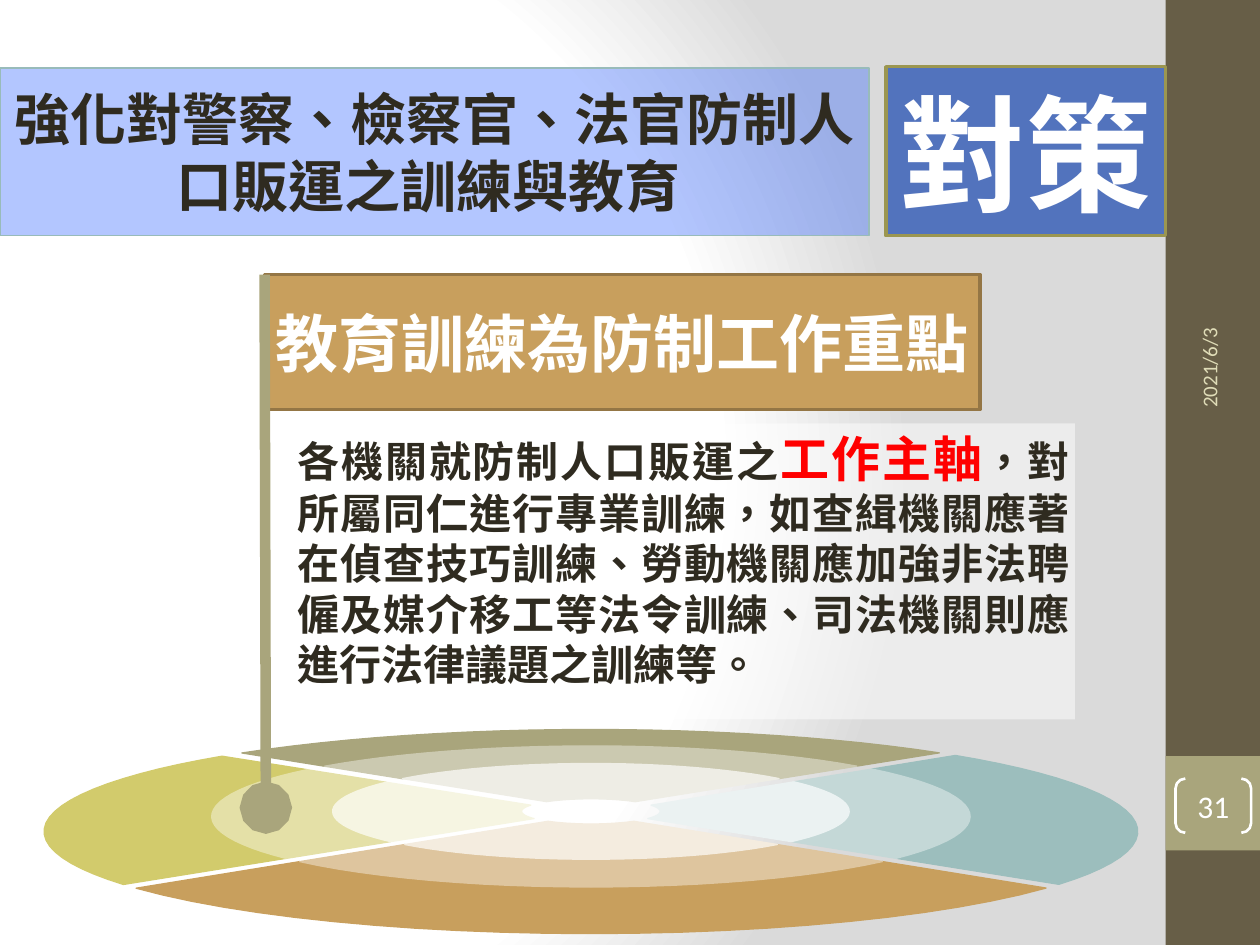
from dataclasses import dataclass
from math import atan2, cos, pi, sin, sqrt
from typing import Optional

from lxml.etree import SubElement
from pptx import Presentation
from pptx.dml.color import RGBColor
from pptx.enum.shapes import MSO_CONNECTOR, MSO_SHAPE
from pptx.enum.text import MSO_ANCHOR as Anchor, PP_ALIGN as Align
from pptx.oxml import parse_xml
from pptx.oxml.ns import nsdecls, qn
from pptx.util import Inches, Pt

WHITE = RGBColor(0xFF, 0xFF, 0xFF)
RED = RGBColor(0xFF, 0x00, 0x00)
INK = RGBColor(0x2F, 0x2B, 0x20)
BROWN = RGBColor(0x67, 0x5E, 0x47)
OLIVE = RGBColor(0xA9, 0xA5, 0x7C)
OLIVE_MID = RGBColor(0xCB, 0xC9, 0xB0)
OLIVE_LIGHT = RGBColor(0xEE, 0xED, 0xE5)
LIME = RGBColor(0xD2, 0xCB, 0x6C)
LIME_MID = RGBColor(0xE4, 0xE0, 0xA7)
LIME_LIGHT = RGBColor(0xF6, 0xF5, 0xE2)
TEAL = RGBColor(0x9C, 0xBE, 0xBD)
TEAL_MID = RGBColor(0xC4, 0xD8, 0xD7)
TEAL_LIGHT = RGBColor(0xEB, 0xF2, 0xF2)
TAN = RGBColor(0xC8, 0x9F, 0x5D)
TAN_MID = RGBColor(0xDE, 0xC5, 0x9E)
TAN_LIGHT = RGBColor(0xF4, 0xEC, 0xDF)
TAN_DARK = RGBColor(0x94, 0x76, 0x45)
BLUE = RGBColor(0x52, 0x73, 0xBD)
BRIGHT_BLUE = RGBColor(0x33, 0x66, 0xFF)
GOLD = RGBColor(0x9B, 0x96, 0x50)
SAGE = RGBColor(0x98, 0xBB, 0xBA)
CREAM = RGBColor(0xDF, 0xDC, 0xB7)

CJK = "Noto Sans CJK SC"
LATIN = "Calibri"
CENTER_X = 4.69
ARC_STEPS = 24
Point = tuple[float, float]


@dataclass(frozen=True)
class Ellipse:
    cy: float
    rx: float
    ry: float

    def at(self, angle: float) -> Point:
        return CENTER_X + self.rx * cos(angle), self.cy + self.ry * sin(angle)


@dataclass(frozen=True)
class Edge:
    """Straight side of a sector, from the hub to the rim."""
    inner: Point
    outer: Point

    def angle_on(self, ellipse: Ellipse) -> float:
        """Angle at which this edge crosses the ellipse."""
        x, y = (self.inner[0] - CENTER_X) / ellipse.rx, (self.inner[1] - ellipse.cy) / ellipse.ry
        dx = (self.outer[0] - self.inner[0]) / ellipse.rx
        dy = (self.outer[1] - self.inner[1]) / ellipse.ry
        a, b, c = dx * dx + dy * dy, x * dx + y * dy, x * x + y * y - 1
        t = (-b + sqrt(max(b * b - a * c, 0))) / a
        return atan2(y + t * dy, x + t * dx)


@dataclass(frozen=True)
class Sector:
    start: Edge
    end: Edge
    colors: tuple[RGBColor, RGBColor, RGBColor]


@dataclass(frozen=True)
class Panel:
    box: tuple[float, float, float, float]
    fill: Optional[RGBColor] = None
    line: Optional[RGBColor] = None
    line_width: float = 1
    alpha: int = 100
    kind: MSO_SHAPE = MSO_SHAPE.RECTANGLE


@dataclass(frozen=True)
class Span:
    text: str
    size: float
    color: RGBColor
    font: str = CJK


RINGS = [Ellipse(6.6, 4.34, 0.81), Ellipse(6.48, 3.01, 0.56),
         Ellipse(6.44, 2.05, 0.38), Ellipse(6.44, 0.55, 0.1)]
SECTORS = [
    Sector(Edge((4.32, 6.36), (1.88, 5.97)), Edge((5.06, 6.36), (7.49, 5.97)),
           (OLIVE, OLIVE_MID, OLIVE_LIGHT)),
    Sector(Edge((4.22, 6.5), (0.98, 7.02)), Edge((4.21, 6.39), (1.75, 6)),
           (LIME, LIME_MID, LIME_LIGHT)),
    Sector(Edge((5.17, 6.39), (7.62, 5.99)), Edge((5.16, 6.5), (8.41, 7.02)),
           (TEAL, TEAL_MID, TEAL_LIGHT)),
    Sector(Edge((5.04, 6.52), (8.31, 7.05)), Edge((4.34, 6.52), (1.08, 7.05)),
           (TAN, TAN_MID, TAN_LIGHT)),
]


def set_background(slide) -> None:
    stops = "".join(f'<a:gs pos="{position}"><a:srgbClr val="{color}"/></a:gs>'
                    for position, color in ((0, WHITE), (75000, WHITE), (100000, "DADADA")))
    slide.element.cSld.insert(0, parse_xml(
        f'<p:bg {nsdecls("p", "a")}><p:bgPr><a:gradFill rotWithShape="1"><a:gsLst>{stops}</a:gsLst>'
        '<a:path path="circle"><a:fillToRect l="20000" t="50000" r="100000" b="50000"/></a:path>'
        '</a:gradFill><a:effectLst/></p:bgPr></p:bg>'))


def add_panel(slide, panel: Panel):
    shape = slide.shapes.add_shape(panel.kind, *map(Inches, panel.box))
    shape.shadow.inherit = False
    if panel.fill is None:
        shape.fill.background()
    else:
        shape.fill.solid()
        shape.fill.fore_color.rgb = panel.fill
    if panel.alpha < 100:
        color = shape.fill._xPr.find(".//" + qn("a:srgbClr"))
        SubElement(color, qn("a:alpha"), val=str(panel.alpha * 1000))
    if panel.line is None:
        shape.line.fill.background()
    else:
        shape.line.color.rgb = panel.line
        shape.line.width = Pt(panel.line_width)
    return shape


def write(shape, spans: list[Span], inset: Optional[tuple[float, float, float, float]] = None,
          anchor: Anchor = Anchor.MIDDLE, align: Align = Align.CENTER) -> None:
    """Fill the shape with one paragraph; inset is left, top, right, bottom."""
    frame = shape.text_frame
    frame.word_wrap = True
    frame.vertical_anchor = anchor
    if inset:
        (frame.margin_left, frame.margin_top,
         frame.margin_right, frame.margin_bottom) = map(Inches, inset)
    paragraph = frame.paragraphs[0]
    paragraph.alignment = align
    for span in spans:
        run = paragraph.add_run()
        run.text = span.text
        run.font.size = Pt(span.size)
        run.font.color.rgb = span.color
        run.font.name = span.font
        if span.font == CJK:
            run.font.bold = True
            properties = run.font._element
            properties.set("lang", "zh-TW")
            SubElement(properties, qn("a:ea"), typeface=CJK)


def arc(ellipse: Ellipse, sector: Sector) -> list[Point]:
    start = sector.start.angle_on(ellipse)
    sweep = (sector.end.angle_on(ellipse) - start) % (2 * pi)
    return [ellipse.at(start + sweep * step / ARC_STEPS) for step in range(ARC_STEPS + 1)]


def add_ring_piece(slide, sector: Sector, outer: Ellipse, inner: Ellipse, color: RGBColor) -> None:
    points = [(Inches(x), Inches(y)) for x, y in arc(outer, sector) + arc(inner, sector)[::-1]]
    builder = slide.shapes.build_freeform(*points[0])
    builder.add_line_segments(points[1:], close=True)
    shape = builder.convert_to_shape()
    shape.shadow.inherit = False
    shape.fill.solid()
    shape.fill.fore_color.rgb = color
    shape.line.color.rgb = color
    shape.line.width = Pt(0)


def add_flagpole(slide) -> None:
    pole = slide.shapes.add_connector(MSO_CONNECTOR.STRAIGHT, Inches(2.11), Inches(6.41),
                                      Inches(2.1), Inches(2.18))
    pole.line.color.rgb = OLIVE
    pole.line.width = Pt(6)
    SubElement(pole.line._get_or_add_ln(), qn("a:headEnd"), type="oval", w="lg", len="lg")
    SubElement(pole._element.spPr, qn("a:effectLst"))


def main() -> None:
    presentation = Presentation()
    presentation.slide_width, presentation.slide_height = Inches(10), Inches(7.5)
    slide = presentation.slides.add_slide(presentation.slide_layouts[6])
    set_background(slide)
    add_panel(slide, Panel((9.25, 0, 0.75, 7.5), BROWN))
    add_panel(slide, Panel((9.25, 6, 0.75, 0.75), OLIVE))

    tag = add_panel(slide, Panel((7.03, 0.53, 2.22, 1.34), BLUE, GOLD, 2))
    write(tag, [Span("對策", 72, WHITE)], (0.08,) * 4, Anchor.TOP)
    title = add_panel(slide, Panel((0, 0.54, 6.9, 1.33), BRIGHT_BLUE, SAGE, alpha=37))
    write(title, [Span("強化對警察、檢察官、法官防制人口販運之訓練與教育 ", 32, INK)], (0.04,) * 4)

    for sector in SECTORS:
        for outer, inner, color in zip(RINGS, RINGS[1:], sector.colors):
            add_ring_piece(slide, sector, outer, inner, color)

    flag = add_panel(slide, Panel((2.1, 2.18, 5.68, 1.07), TAN, TAN_DARK, 2))
    write(flag, [Span("教育訓練為防制工作重點", 36, WHITE)], (0.04,) * 4)
    add_flagpole(slide)
    body = add_panel(slide, Panel((2.24, 3.36, 6.29, 2.35), WHITE, alpha=50))
    write(body, [
        Span("各機關就防制人口販運之", 24, INK),
        Span("工作主軸", 28, RED),
        Span("，對所屬同仁進行專業訓練，如查緝機關應著在偵查技巧訓練、勞動機關應加強非法聘"
             "僱及媒介移工等法令訓練、司法機關則應進行法律議題之訓練等。", 24, INK),
    ], (0.12, 0.04, 0.04, 0.04), Anchor.TOP, Align.JUSTIFY)

    date = slide.shapes.add_textbox(Inches(8.26), Inches(1.8), Inches(2.67), Inches(0.4))
    date.rotation = 270
    write(date, [Span("2021/6/3", 12, CREAM, LATIN)], align=Align.LEFT)
    number = add_panel(slide, Panel((9.33, 6.18, 0.6, 0.43), line=WHITE, line_width=1.5,
                                    kind=MSO_SHAPE.DOUBLE_BRACKET))
    number.adjustments[0] = 0.18
    write(number, [Span("31", 18, WHITE, LATIN)], (0,) * 4)
    presentation.save("out.pptx")


if __name__ == "__main__":
    main()
